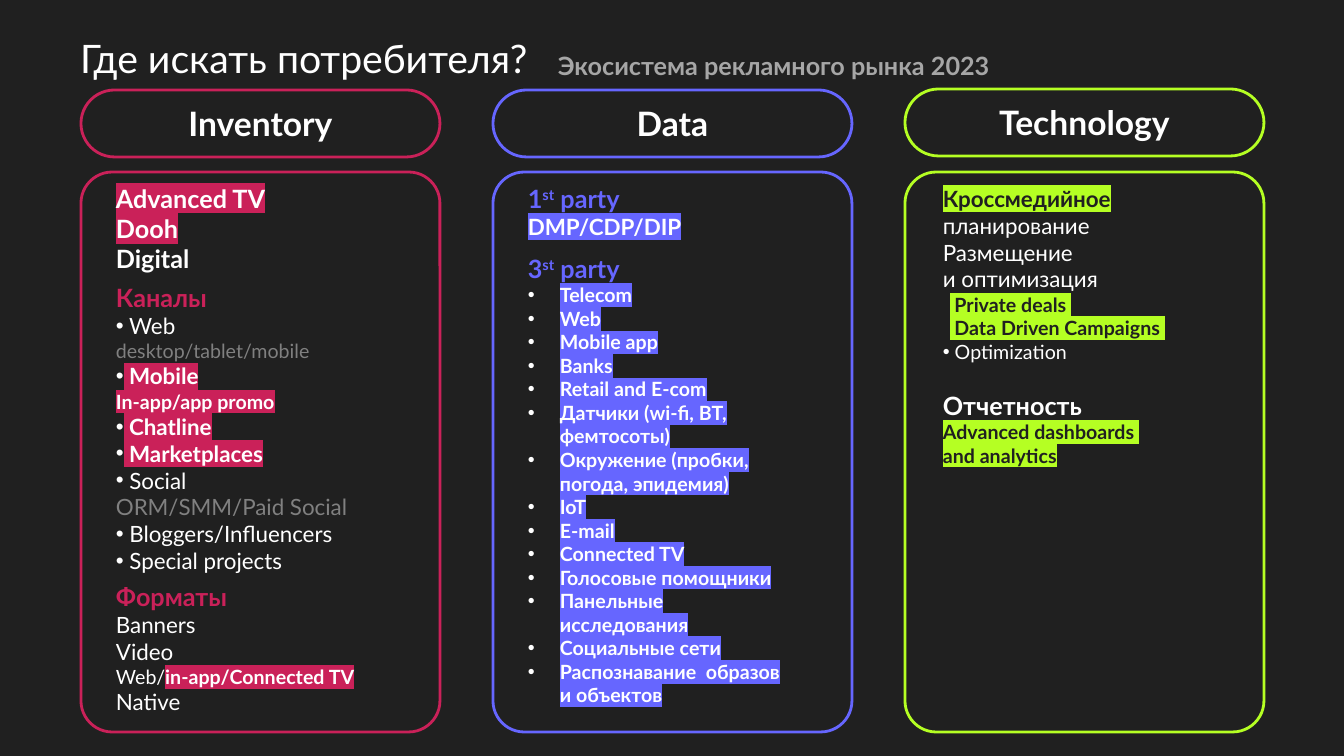
from dataclasses import dataclass, field
from lxml.etree import SubElement
from pptx import Presentation
from pptx.dml.color import RGBColor
from pptx.enum.shapes import MSO_SHAPE as Preset
from pptx.enum.text import MSO_ANCHOR as Anchor, MSO_AUTO_SIZE as AutoSize, PP_ALIGN as Align
from pptx.oxml.ns import qn
from pptx.util import Emu, Pt

SLIDE_W, SLIDE_H = 1344, 756
EMU_PER_PX = 12192000 / SLIDE_W


@dataclass(frozen=True)
class Theme:
    font: str = "Lato"
    dark: str = "202020"
    white: str = "FFFFFF"
    muted: str = "808080"
    subtitle: str = "A6A6A6"
    pink: str = "CA2159"
    violet: str = "6666FF"
    lime: str = "B5FF23"
    title_size: int = 28
    heading_size: int = 24
    large: int = 18
    medium: int = 16
    small: int = 14
    outline: int = 2


THEME = Theme()


@dataclass
class Span:
    text: str
    size: int = THEME.medium
    color: str = THEME.white
    bold: bool = False
    mark: str = ""
    raised: bool = False


@dataclass
class Para:
    spans: list = field(default_factory=list)
    bullet: bool = False
    hang: int = 0
    before: float = 0


def px(length):
    return Emu(round(length * EMU_PER_PX))


def box_emu(box):
    return [px(length) for length in box]


def line(text, size=THEME.medium, color=THEME.white, bold=False, mark="", **layout):
    return Para([Span(text, size, color, bold, mark)], **layout)


def item(text, size=THEME.medium, color=THEME.white, mark=""):
    return line(" " + text, size, color, bool(mark), mark, bullet=True)


def party(number):
    parts = ((number, False), ("st", True), (" party", False))
    return Para([Span(text, THEME.large, THEME.violet, True, raised=raised)
                 for text, raised in parts])


def write_span(paragraph, span):
    run = paragraph.add_run()
    run.text = span.text
    font = run.font
    font.size, font.bold, font.name = Pt(span.size), span.bold, THEME.font
    font.color.rgb = RGBColor.from_string(span.color)
    props = run._r.get_or_add_rPr()
    if span.raised:
        props.set("baseline", "30000")
    if span.mark:
        highlight = SubElement(props, qn("a:highlight"))
        SubElement(highlight, qn("a:srgbClr"), val=span.mark)
        props.find(qn("a:solidFill")).addnext(highlight)


def write_text(frame, paras, align=Align.LEFT):
    frame.word_wrap = True
    for index, para in enumerate(paras):
        paragraph = frame.paragraphs[0] if index == 0 else frame.add_paragraph()
        paragraph.alignment = align
        if para.before:
            paragraph.space_before = Pt(para.before)
        if para.bullet:
            props = paragraph._p.get_or_add_pPr()
            props.set("marL", str(px(para.hang)))
            props.set("indent", str(-px(para.hang)))
            SubElement(props, qn("a:buFont"), typeface="Arial")
            SubElement(props, qn("a:buChar"), char="•")
        for span in para.spans:
            write_span(paragraph, span)


def add_text(slide, box, paras):
    frame = slide.shapes.add_textbox(*box_emu(box)).text_frame
    write_text(frame, paras)
    frame.auto_size = AutoSize.SHAPE_TO_FIT_TEXT


def add_outline(slide, preset, box, color, adjustments):
    shape = slide.shapes.add_shape(preset, *box_emu(box))
    for index, value in enumerate(adjustments):
        shape.adjustments[index] = value
    shape.shadow.inherit = False
    shape.fill.background()
    shape.line.color.rgb = RGBColor.from_string(color)
    shape.line.width = Pt(THEME.outline)
    return shape


def add_header(slide, box):
    left, top, width, height = box
    title = slide.shapes.title
    title.left, title.top, title.width, title.height = box_emu((left, top, 571, height))
    frame = title.text_frame
    write_text(frame, [line("Где искать потребителя?", THEME.title_size)])
    frame.auto_size = AutoSize.NONE
    frame.vertical_anchor = Anchor.MIDDLE
    frame.paragraphs[0].line_spacing = 0.9
    add_text(slide, (left + 478, top + 5, width - 478, 40),
             [line("Экосистема рекламного рынка 2023", THEME.large, THEME.subtitle, True)])


def add_column(slide, box, heading, color, blocks, lift=0):
    left, top, width, height = box
    pill = add_outline(slide, Preset.ROUND_2_DIAG_RECTANGLE,
                       (left, top - lift, width, 67), color, (0.5, 0.5))
    pill.text_frame.vertical_anchor = Anchor.MIDDLE
    write_text(pill.text_frame, [line(heading, THEME.heading_size, bold=True)], Align.CENTER)
    add_outline(slide, Preset.ROUNDED_RECTANGLE,
                (left, top + 82, width, height - 82), color, (0.087,))
    for (dx, dy, block_width, block_height), paras in blocks:
        add_text(slide, (left + dx, top + dy, block_width, block_height), paras)


def inventory_blocks():
    pink, large, small = THEME.pink, THEME.large, THEME.small
    media = [
        line("Advanced TV", large, bold=True, mark=pink),
        line("Dooh", large, bold=True, mark=pink),
        line("Digital", large, bold=True),
    ]
    channels = [
        line("Каналы", large, pink, True),
        item("Web"),
        line("desktop/tablet/mobile", small, THEME.muted),
        item("Mobile", mark=pink),
        line("In-app/app promo", small, bold=True, mark=pink),
        item("Chatline", mark=pink),
        item("Marketplaces", mark=pink),
        item("Social"),
        line("ORM/SMM/Paid Social", color=THEME.muted),
        item("Bloggers/Influencers"),
        item("Special projects"),
    ]
    formats = [
        line("Форматы", large, pink, True),
        line("Banners"),
        line("Video"),
        Para([Span("Web/", small), Span("in-app/Connected TV", small, bold=True, mark=pink)]),
        line("Native"),
    ]
    return [((25, 88, 291, 102), media), ((25, 187, 291, 305), channels),
            ((25, 486, 291, 146), formats)]


def data_blocks():
    sources = ("Telecom", "Web", "Mobile app", "Banks", "Retail and E-com",
               "Датчики (wi-fi, BT, фемтосоты)", "Окружение (пробки, погода, эпидемия)",
               "IoT", "E-mail", "Connected TV", "Голосовые помощники",
               "Панельные исследования", "Социальные сети",
               "Распознавание  образов и объектов")
    first = [party("1"), line("DMP/CDP/DIP", bold=True, mark=THEME.violet)]
    third = [party("3")] + [
        line(source, THEME.small, bold=True, mark=THEME.violet, bullet=True, hang=32)
        for source in sources]
    return [((25, 88, 264, 95), first), ((25, 158, 277, 495), third)]


def technology_blocks():
    dark, lime, small = THEME.dark, THEME.lime, THEME.small
    tools = [
        Para([Span("Кроссмедийное", color=dark, bold=True, mark=lime),
              Span(" планирование")]),
        line("Размещение"),
        line("и оптимизация"),
        item("Private deals ", small, dark, lime),
        item("Data Driven Campaigns ", small, dark, lime),
        item("Optimization", small),
        line("Отчетность", THEME.large, bold=True, before=19.2),
        line("Advanced dashboards ", small, dark, True, lime),
        line("and analytics", small, dark, True, lime),
    ]
    return [((28, 90, 305, 295), tools)]


def main():
    deck = Presentation()
    deck.slide_width, deck.slide_height = px(SLIDE_W), px(SLIDE_H)
    slide = deck.slides.add_slide(deck.slide_layouts[5])
    slide.background.fill.solid()
    slide.background.fill.fore_color.rgb = RGBColor.from_string(THEME.dark)
    add_header(slide, (70, 40, 1122, 42))
    columns = (("Inventory", THEME.pink, inventory_blocks(), 0),
               ("Data", THEME.violet, data_blocks(), 0),
               ("Technology", THEME.lime, technology_blocks(), 1))
    for index, (heading, color, blocks, lift) in enumerate(columns):
        add_column(slide, (81 + index * 412, 90, 359, 642), heading, color, blocks, lift)
    deck.save("out.pptx")


if __name__ == "__main__":
    main()
